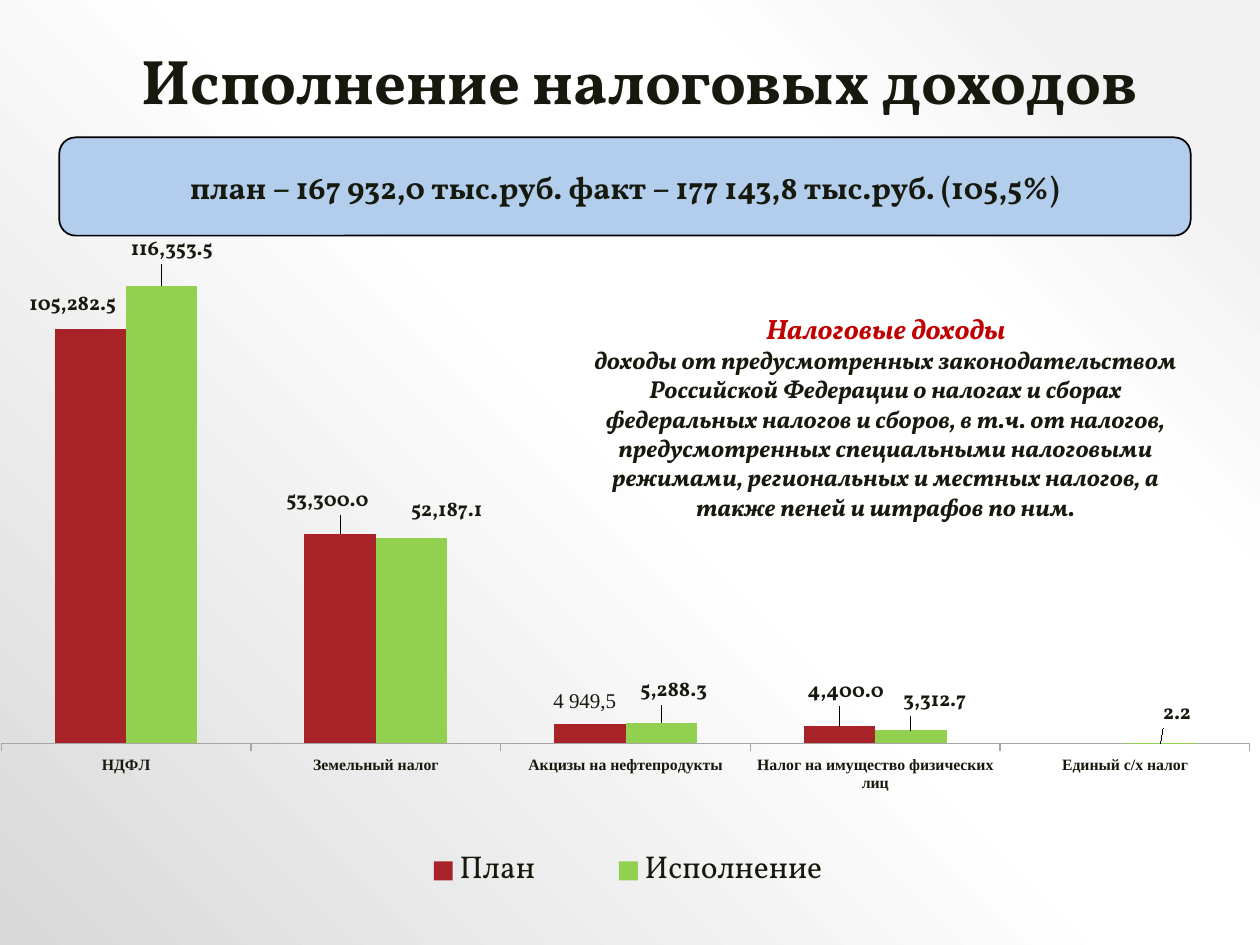
from lxml import etree
from pptx import Presentation
from pptx.chart.data import CategoryChartData
from pptx.dml.color import RGBColor
from pptx.enum.chart import XL_CHART_TYPE as ChartType
from pptx.enum.chart import XL_LABEL_POSITION as LabelPos
from pptx.enum.chart import XL_LEGEND_POSITION as LegendPos
from pptx.enum.chart import XL_TICK_LABEL_POSITION as TickLabels
from pptx.enum.chart import XL_TICK_MARK as TickMark
from pptx.enum.shapes import MSO_SHAPE as Shape
from pptx.enum.text import MSO_ANCHOR as Anchor
from pptx.enum.text import MSO_AUTO_SIZE as AutoSize
from pptx.enum.text import PP_ALIGN as Align
from pptx.oxml import parse_xml
from pptx.oxml.ns import qn
from pptx.util import Inches, Pt

COLORS = {"text": "16190D", "accent": "C00000", "banner": "B3CDED", "border": "000000",
          "plan": "A72327", "actual": "92D050", "axis": "A6A6A6", "chart": "545454"}
BACKGROUND_STOPS = [(10, "F2F2F2"), (28, "FFFFFF"), (48, "FFFFFF"), (100, "D9D9D9")]
SERIF, TIMES = "Vollkorn", "Times New Roman"
NUMBER_FORMAT = "#,##0.0"

TAXES = ["НДФЛ", "Земельный налог", "Акцизы на нефтепродукты",
         "Налог на имущество физических лиц", "Единый с/х налог"]
# Name, colour, values, label offsets as fractions of the chart
SERIES = [
    ("План", "plan", [105282.5, 53300, 4949.5, 4400, None],
     [(-0.014, -0.007), (-0.01, -0.02), (-0.004, -0.01), (0.005, -0.022)]),
    ("Исполнение", "actual", [116353.5, 52187.1, 5288.3, 3312.7, 2.2],
     [(0.008, -0.024), (0.028, -0.011), (0.01, -0.018), (0.019, -0.014), (0.013, -0.015)]),
]
DEFINITION = ("доходы от предусмотренных законодательством Российской Федерации о налогах и сборах "
              "федеральных налогов и сборов, в т.ч. от налогов, предусмотренных специальными "
              "налоговыми режимами, региональных и местных налогов, а также пеней и штрафов по ним.")


def rgb(name):
    return RGBColor.from_string(COLORS[name])


def style_font(font, size, color="text", name=SERIF, bold=False, italic=False):
    font.size, font.name, font.bold, font.italic = Pt(size), name, bold, italic
    font.color.rgb = rgb(color)


def write(paragraph, text, align=Align.CENTER, spacing=None, **style):
    paragraph.alignment = align
    if spacing:
        paragraph.line_spacing = spacing
    run = paragraph.add_run()
    run.text = text
    style_font(run.font, **style)


def add_text_frame(slide, left, top, width, height, anchor=Anchor.TOP):
    box = slide.shapes.add_textbox(Inches(left), Inches(top), Inches(width), Inches(height))
    frame = box.text_frame
    frame.word_wrap = True
    frame.vertical_anchor = anchor
    return frame


def paint_background(slide):
    fill = slide.background.fill
    fill.solid()
    solid = next(slide.element.iter(qn("a:solidFill")))
    stops = "".join(f'<a:gs pos="{pos * 1000}"><a:srgbClr val="{color}"/></a:gs>'
                    for pos, color in BACKGROUND_STOPS)
    gradient = parse_xml(
        '<a:gradFill xmlns:a="http://schemas.openxmlformats.org/drawingml/2006/main" '
        f'rotWithShape="1"><a:gsLst>{stops}</a:gsLst><a:path path="circle">'
        '<a:fillToRect l="100000" b="100000"/></a:path></a:gradFill>')
    solid.getparent().replace(solid, gradient)


def make_layout(**values):
    """Manual chart layout; keys are the c: element names."""
    layout = etree.Element(qn("c:layout"))
    manual = etree.SubElement(layout, qn("c:manualLayout"))
    for key, value in values.items():
        etree.SubElement(manual, qn(f"c:{key}")).set("val", str(value))
    return layout


def set_layout(element, layout, after):
    for old in element.findall(qn("c:layout")):
        element.remove(old)
    if after is None:
        element.insert(0, layout)
    else:
        element.find(qn(after)).addnext(layout)


def hide_leader_lines(series):
    labels = series._element.find(qn("c:dLbls"))
    labels.append(parse_xml(
        '<c:extLst xmlns:c="http://schemas.openxmlformats.org/drawingml/2006/chart">'
        '<c:ext uri="{CE6537A1-D6FC-4f65-9D91-7224C49458BB}" '
        'xmlns:c15="http://schemas.microsoft.com/office/drawing/2012/chart">'
        '<c15:showLeaderLines val="0"/></c:ext></c:extLst>'))


def add_banner(slide):
    banner = slide.shapes.add_shape(Shape.ROUNDED_RECTANGLE, Inches(0.47), Inches(1.09),
                                    Inches(8.98), Inches(0.78))
    banner.shadow.inherit = False
    banner.fill.solid()
    banner.fill.fore_color.rgb = rgb("banner")
    banner.line.color.rgb = rgb("border")
    banner.line.width = Pt(1)
    banner.text_frame.vertical_anchor = Anchor.MIDDLE
    # An em space parts the plan from the actual amount
    write(banner.text_frame.paragraphs[0],
          "план – 167 932,0 тыс.руб. факт – 177 143,8 тыс.руб. (105,5%)", size=18, bold=True)


def style_series(series, color, offsets):
    series.format.fill.solid()
    series.format.fill.fore_color.rgb = rgb(color)
    series.invert_if_negative = False
    labels = series.data_labels
    labels.show_value = True
    labels.number_format, labels.number_format_is_linked = NUMBER_FORMAT, False
    labels.position = LabelPos.OUTSIDE_END
    style_font(labels.font, 12, bold=True)
    for index, _ in enumerate(offsets):
        label = series.points[index].data_label
        if (color, index) == ("plan", 2):
            write(label.text_frame.paragraphs[0], "4 949,5", size=12, name=TIMES)
        else:
            style_font(label.font, 12, bold=True)
        label.position = LabelPos.OUTSIDE_END
    for dlbl, (dx, dy) in zip(series._element.iter(qn("c:dLbl")), offsets):
        set_layout(dlbl, make_layout(x=dx, y=dy), "c:idx")
    hide_leader_lines(series)


def add_tax_chart(slide):
    data = CategoryChartData(number_format=NUMBER_FORMAT)
    data.categories = TAXES
    for name, _, values, _ in SERIES:
        data.add_series(name, values)
    chart = slide.shapes.add_chart(ChartType.COLUMN_CLUSTERED, Inches(0), Inches(1.8),
                                   Inches(10), Inches(5.39), data).chart
    chart.has_title = False
    style_font(chart.font, 16.8, color="chart", name="League Spartan")
    plot = chart.plots[0]
    plot.gap_width, plot.overlap, plot.vary_by_categories = 150, 0, False
    for series, (_, color, _, offsets) in zip(plot.series, SERIES):
        style_series(series, color, offsets)

    # Axes
    taxes = chart.category_axis
    taxes.major_tick_mark = TickMark.OUTSIDE
    taxes.tick_label_position = TickLabels.LOW
    taxes.format.line.color.rgb = rgb("axis")
    style_font(taxes.tick_labels.font, 9, name=TIMES, bold=True)
    amounts = chart.value_axis
    amounts.minimum_scale, amounts.maximum_scale, amounts.major_unit = 0, 116500, 20000
    amounts.has_major_gridlines = False
    amounts.visible = False

    # Legend and plot area
    chart.has_legend = True
    legend = chart.legend
    legend.position = LegendPos.RIGHT
    legend.include_in_layout = False
    style_font(legend.font, 18)
    edges = {"xMode": "edge", "yMode": "edge"}
    set_layout(legend._element, make_layout(**edges, x=0.286, y=0.927, w=0.425, h=0.07),
               "c:legendPos")
    plot_area = next(chart.element.iter(qn("c:plotArea")))
    set_layout(plot_area, make_layout(layoutTarget="inner", **edges,
                                      x=0.001, y=0.086, w=0.991, h=0.675), None)


def add_definition(slide):
    frame = add_text_frame(slide, 4.61, 2.42, 4.84, 1.78)
    frame.auto_size = AutoSize.SHAPE_TO_FIT_TEXT
    write(frame.paragraphs[0], "Налоговые доходы", size=16, color="accent", bold=True, italic=True)
    write(frame.add_paragraph(), DEFINITION, size=14, bold=True, italic=True)


def main():
    deck = Presentation()
    deck.slide_width, deck.slide_height = Inches(10), Inches(7.5)
    slide = deck.slides.add_slide(deck.slide_layouts[6])
    paint_background(slide)
    title = add_text_frame(slide, 0.39, 0.23, 9.37, 0.76, anchor=Anchor.BOTTOM)
    write(title.paragraphs[0], "Исполнение налоговых доходов", spacing=0.9, size=36, bold=True)
    add_banner(slide)
    add_tax_chart(slide)
    add_definition(slide)
    deck.save("out.pptx")


if __name__ == "__main__":
    main()
